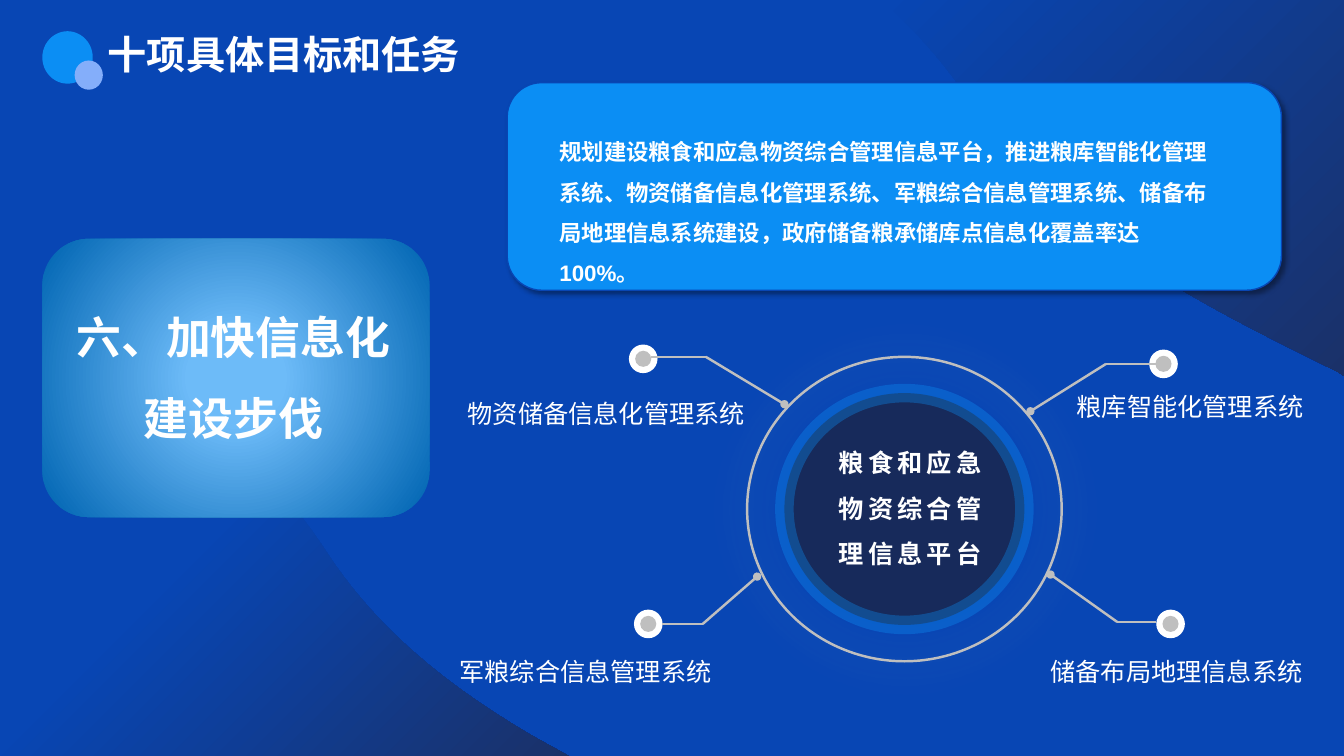
from lxml.etree import SubElement
from pptx import Presentation
from pptx.dml.color import RGBColor
from pptx.enum.shapes import MSO_CONNECTOR, MSO_SHAPE
from pptx.enum.text import PP_ALIGN
from pptx.oxml import parse_xml
from pptx.oxml.ns import qn
from pptx.util import Inches, Pt

theme = {
    "base": "0846B4", "navy": "1A3169", "core": "172A5B",
    "sky": "0B8EF4", "lilac": "84AEFA", "glow": "6DBBF8", "deep": "086BB7",
    "gray": "BFBFBF", "mist": "D9D9D9", "white": "FFFFFF", "black": "000000",
    "font": "Arial", "head": 28, "card": 32, "body": 16, "label": 18,
}
NS = 'xmlns:a="http://schemas.openxmlformats.org/drawingml/2006/main"'

deck = Presentation()
deck.slide_width, deck.slide_height = Inches(13.33), Inches(7.5)
cell = deck.slide_height / 75  # square grid, 75 rows high
slide = deck.slides.add_slide(deck.slide_layouts[6])
slide.background.fill.solid()
slide.background.fill.fore_color.rgb = RGBColor.from_string(theme["base"])


def draw(kind, box, fill=None, line=None, width=1, shade=None):
    """Add a preset shape; shade is (colour, blur, distance, angle)."""
    shape = slide.shapes.add_shape(kind, *[round(n * cell) for n in box])
    shape.shadow.inherit = False
    if fill:
        shape.fill.solid()
        shape.fill.fore_color.rgb = RGBColor.from_string(theme[fill])
    else:
        shape.fill.background()
    if line:
        shape.line.color.rgb = RGBColor.from_string(theme[line])
        shape.line.width = Pt(width)
    else:
        shape.line.fill.background()
    if shade:
        tone, blur, dist, angle = shade
        effects = shape._element.spPr.find(qn("a:effectLst"))
        effects.append(parse_xml(
            f'<a:outerShdw {NS} blurRad="{Pt(blur)}" dist="{Pt(dist)}" '
            f'dir="{angle * 60000}" algn="ctr" rotWithShape="0">'
            f'<a:srgbClr val="{theme[tone]}"><a:alpha val="40000"/></a:srgbClr>'
            '</a:outerShdw>'))
    return shape


def write(box, lines, size, bold=True, space=1.0, align=PP_ALIGN.LEFT):
    frame = slide.shapes.add_textbox(*[round(n * cell) for n in box]).text_frame
    frame.word_wrap = True
    frame.text = "\n".join(lines)
    for para in frame.paragraphs:
        para.alignment, para.line_spacing = align, space
        para.font.name, para.font.size = theme["font"], Pt(theme[size])
        para.font.bold = bold
        para.font.color.rgb = RGBColor.from_string(theme["white"])
    return frame


# Background waves: four-point tuples are curves, single points are corners
waves = [
    ([(87.5, 0)], [[(88.5, 1), (91.3, 3.6), (93.9, 6.6), (96.1, 9.9)],
                   [(96.1, 9.9), (105.1, 23.3), (118.9, 30.1), (132.7, 36.9)]],
     [(133.3, 37.3), (133.3, 0)], 0),
    ([(0, 30)], [[(2.1, 31), (13.7, 36.7), (24.8, 43.1), (32.2, 54.5)],
                 [(32.2, 54.5), (37.5, 62.7), (44.7, 68.2), (52.6, 72.9)]],
     [(56.4, 75), (0, 75)], 0.43),
]
for start, curves, finish, begin in waves:
    edge = list(start)
    for curve in curves:
        for step in range(25):
            t = step / 24
            mix = ((1 - t) ** 3, 3 * t * (1 - t) ** 2, 3 * t * t * (1 - t), t ** 3)
            edge.append(tuple(sum(m * p[k] for m, p in zip(mix, curve)) for k in (0, 1)))
    edge += finish
    path = slide.shapes.build_freeform(*edge[0], scale=cell)
    path = slide.shapes.build_freeform(
        round(edge[0][0] * cell), round(edge[0][1] * cell), scale=1.0)
    path.add_line_segments([(round(x * cell), round(y * cell)) for x, y in edge[1:]])
    wave = path.convert_to_shape()
    wave.shadow.inherit = False
    wave.line.fill.background()
    wave.fill.gradient()
    wave.fill.gradient_angle = 315
    for stop, tone, place in zip(wave.fill.gradient_stops, ("base", "navy"), (begin, 1)):
        stop.color.rgb = RGBColor.from_string(theme[tone])
        stop.position = place

# Title
draw(MSO_SHAPE.OVAL, (4.2, 3.1, 5, 5.2), "sky")
draw(MSO_SHAPE.OVAL, (7.4, 6, 2.8, 2.9), "lilac")

# Topic card
card = draw(MSO_SHAPE.ROUNDED_RECTANGLE, (4.2, 23.7, 38.4, 27.6))
card.fill.gradient()
for stop, tone, place in zip(card.fill.gradient_stops, ("glow", "deep"), (0.2, 0.93)):
    stop.color.rgb = RGBColor.from_string(theme[tone])
    stop.position = place
grad = card._element.spPr.find(qn("a:gradFill"))
grad.replace(grad.find(qn("a:lin")), parse_xml(
    f'<a:path {NS} path="circle">'
    '<a:fillToRect l="50000" t="50000" r="50000" b="50000"/></a:path>'))
write((6.1, 27.6, 34.1, 17.2), ["六、加快信息化", "建设步伐"], "card",
      space=1.5, align=PP_ALIGN.CENTER)

# Summary panel
draw(MSO_SHAPE.ROUNDED_RECTANGLE, (50.3, 8.2, 76.8, 20.6), "sky", "base",
     shade=("black", 4, 3, 45))
write((54.5, 11.9, 67, 13.1),
      ["规划建设粮食和应急物资综合管理信息平台，推进粮库智能化管理系统、"
       "物资储备信息化管理系统、军粮综合信息管理系统、储备布局地理信息系统建设，"
       "政府储备粮承储库点信息化覆盖率达100%。"], "body", space=1.5)
write((9.7, 2.5, 38.8, 5.7), ["十项具体目标和任务"], "head")

# Hub
hub = draw(MSO_SHAPE.OVAL, (77.8, 39, 23.8, 23), "core", "sky", 13.25)
rim = hub._element.spPr.find(qn("a:ln")).find(".//" + qn("a:srgbClr"))
SubElement(rim, qn("a:alpha")).set("val", "35000")
name = write((82.2, 42.4, 17.1, 34), ["粮食和应急物资综合管理信息平台"], "label", space=1.5)
name.paragraphs[0].runs[0].font._element.set("spc", "300")
draw(MSO_SHAPE.OVAL, (74.1, 35.4, 31.2, 30.2), line="gray", width=1.75,
     shade=("mist", 31, 0, 0))

# Systems: dot centre, stub start, elbow, point on ring, label place, label
systems = [
    ((115.4, 36.1), (114.9, 36.1), (109.7, 36.1), (102.2, 40.8), (105.8, 38.3), "粮库智能化管理系统"),
    ((63.8, 35.6), (64.6, 35.4), (70, 35.4), (77.8, 40.1), (45.4, 39), "物资储备信息化管理系统"),
    ((64.3, 61.9), (65.7, 61.9), (69.7, 61.9), (75.1, 57.2), (44.6, 64.6), "军粮综合信息管理系统"),
    ((116.1, 61.9), (114.7, 61.7), (110.8, 61.7), (104.2, 57), (103.2, 64.6), "储备布局地理信息系统"),
]
for (x, y), stub, elbow, ring, place, label in systems:
    for size, tone, line in ((2.7, "white", "white"), (1.6, "gray", None)):
        draw(MSO_SHAPE.OVAL, (x - size / 2, y - size / 2, size, size), tone, line)
    for start, end, tail in ((stub, elbow, False), (elbow, ring, True)):
        link = slide.shapes.add_connector(
            MSO_CONNECTOR.STRAIGHT, *[round(n * cell) for n in start + end])
        link.line.color.rgb = RGBColor.from_string(theme["gray"])
        link.line.width = Pt(1.75)
        if tail:
            SubElement(link.line._get_or_add_ln(), qn("a:tailEnd")).set("type", "oval")
        SubElement(link._element.spPr, qn("a:effectLst"))
    write((*place, 30, 4), [label], "label", bold=False)

deck.save("out.pptx")
